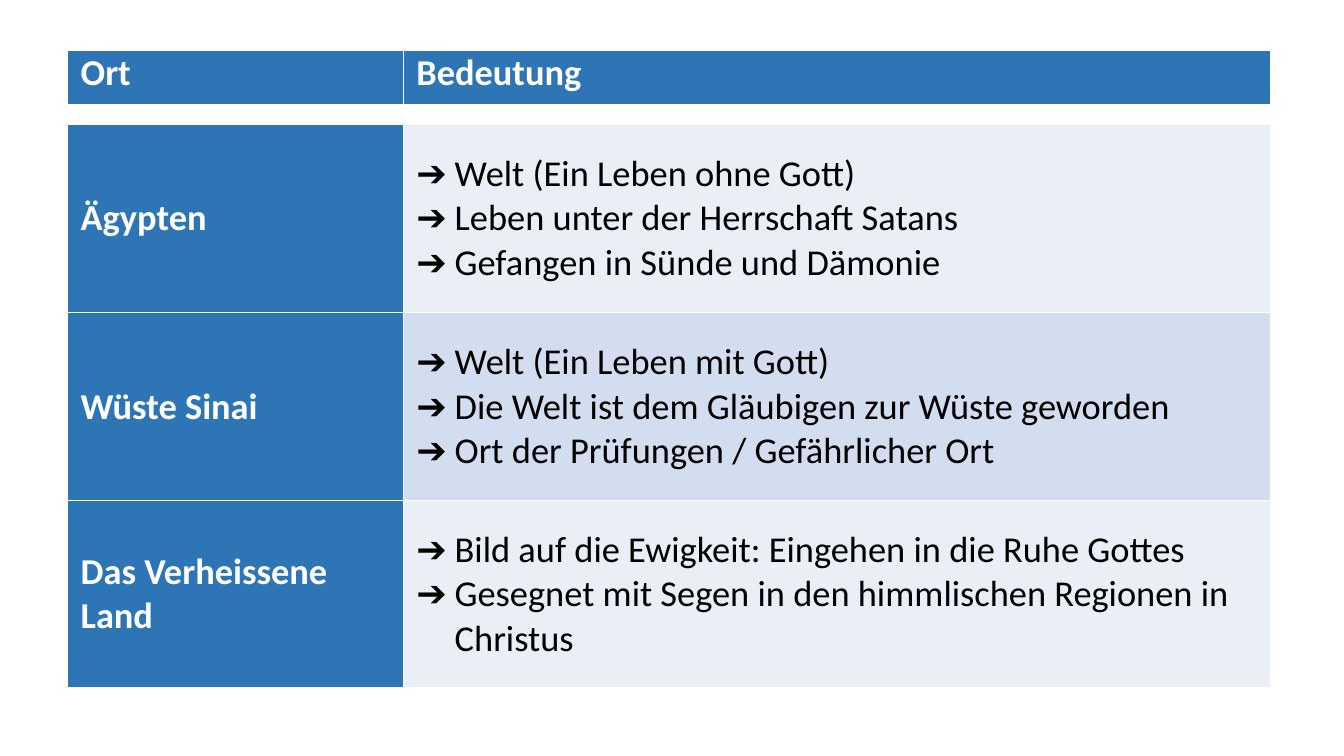
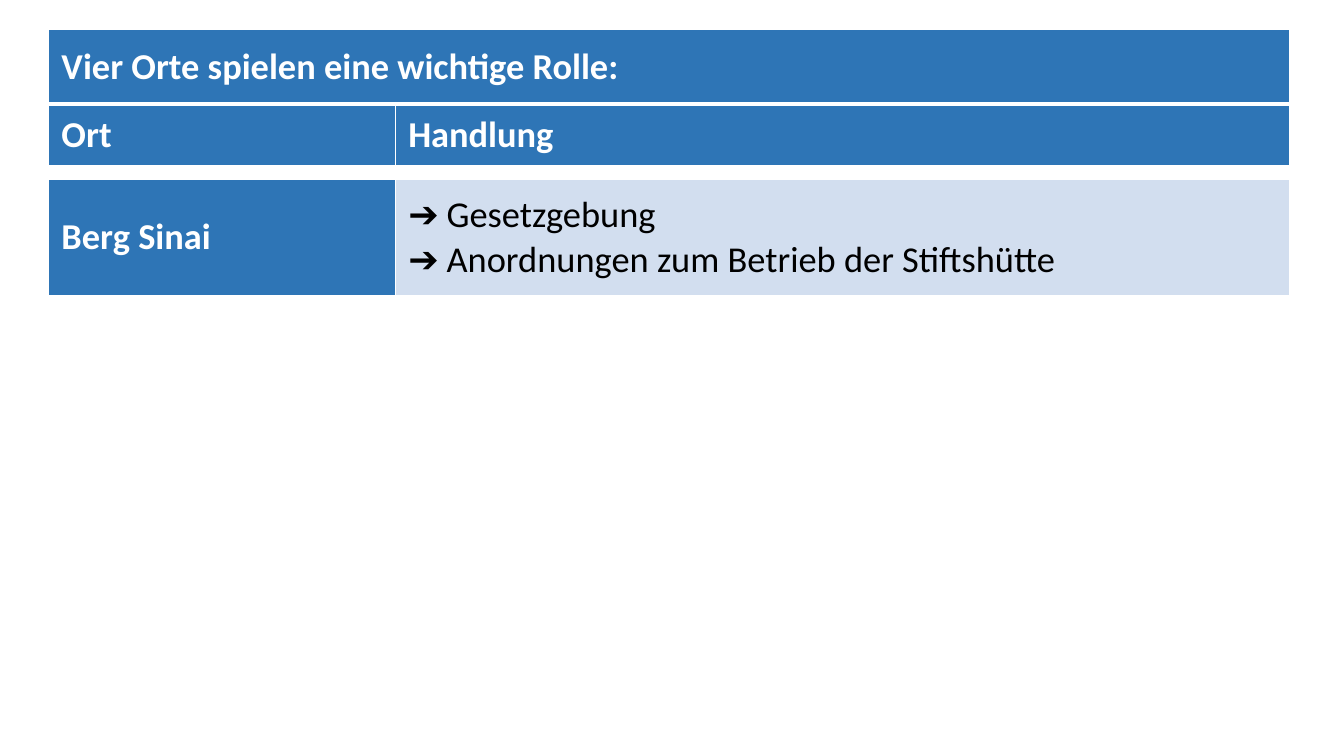
from dataclasses import dataclass

from lxml import etree
from pptx import Presentation
from pptx.dml.color import RGBColor
from pptx.enum.text import MSO_ANCHOR, PP_ALIGN
from pptx.oxml.ns import qn
from pptx.util import Inches, Pt

TOP, MIDDLE = MSO_ANCHOR.TOP, MSO_ANCHOR.MIDDLE
LEFT, JUSTIFY = PP_ALIGN.LEFT, PP_ALIGN.JUSTIFY


@dataclass(frozen=True)
class Theme:
    font: str = "Calibri"
    text_size: int = 26
    gap_size: int = 4
    thin_line: int = 1
    thick_line: int = 3
    white: str = "FFFFFF"
    black: str = "000000"
    blue: str = "2E75B6"
    pale: str = "EAEFF7"
    light: str = "D2DEEF"
    bullet: str = "➔"
    hanging: float = 0.38
    side_margin: float = 0.13


THEME = Theme()


@dataclass(frozen=True)
class Row:
    height: float
    label: str = ""
    heading: str = ""
    points: tuple[str, ...] = ()
    shade: str = THEME.blue
    anchor: MSO_ANCHOR = MIDDLE
    is_title: bool = False


@dataclass(frozen=True)
class Overview:
    left: float
    top: float
    widths: tuple[float, float]
    rows: tuple[Row, ...]


OVERVIEWS = (
    Overview(0.67, 0.5, (3.33, 8.6), (
        Row(0.55, "Ort", heading="Bedeutung", anchor=TOP),
        Row(0.18, shade=THEME.white),
        Row(1.87, "Ägypten", shade=THEME.pale, points=(
            "Welt (Ein Leben ohne Gott)",
            "Leben unter der Herrschaft Satans",
            "Gefangen in Sünde und Dämonie")),
        Row(1.87, "Wüste Sinai", shade=THEME.light, points=(
            "Welt (Ein Leben mit Gott)",
            "Die Welt ist dem Gläubigen zur Wüste geworden",
            "Ort der Prüfungen / Gefährlicher Ort")),
        Row(1.85, "Das Verheissene Land", shade=THEME.pale, points=(
            "Bild auf die Ewigkeit: Eingehen in die Ruhe Gottes",
            "Gesegnet mit Segen in den himmlischen Regionen in Christus")),
    )),
    Overview(0.48, 0.29, (3.44, 8.87), (
        Row(0.74, "Vier Orte spielen eine wichtige Rolle:", is_title=True),
        Row(0.61, "Ort", heading="Handlung"),
        Row(0.14, shade=THEME.white),
        Row(1.15, "Berg Sinai", shade=THEME.light, points=(
            "Gesetzgebung",
            "Anordnungen zum Betrieb der Stiftshütte")),
    )),
)


def add_borders(cell, top: int, bottom: int) -> None:
    properties = cell._tc.get_or_add_tcPr()
    sides = {"L": THEME.thin_line, "R": THEME.thin_line, "T": top, "B": bottom}
    for side, width in sides.items():
        line = etree.SubElement(properties, qn(f"a:ln{side}"), w=str(Pt(width)))
        fill = etree.SubElement(line, qn("a:solidFill"))
        etree.SubElement(fill, qn("a:srgbClr"), val=THEME.white)


def add_bullet(paragraph) -> None:
    properties = paragraph._p.get_or_add_pPr()
    indent = Inches(THEME.hanging)
    properties.set("marL", str(indent))
    properties.set("indent", str(-indent))
    etree.SubElement(properties, qn("a:buFont"), typeface=THEME.font)
    etree.SubElement(properties, qn("a:buChar"), char=THEME.bullet)


def write_lines(cell, lines: tuple[str, ...], color: str, bold: bool,
                align: PP_ALIGN, bulleted: bool) -> None:
    frame = cell.text_frame
    for index, line in enumerate(lines):
        paragraph = frame.add_paragraph() if index else frame.paragraphs[0]
        paragraph.alignment = align
        if bulleted:
            add_bullet(paragraph)
        run = paragraph.add_run()
        run.text = line
        run.font.name = THEME.font
        run.font.size = Pt(THEME.text_size)
        run.font.bold = bold
        run.font.color.rgb = RGBColor.from_string(color)


def style_cell(cell, fill: str, anchor: MSO_ANCHOR, top: int, bottom: int) -> None:
    cell.margin_left = cell.margin_right = Inches(THEME.side_margin)
    cell.margin_top = cell.margin_bottom = 0
    cell.vertical_anchor = anchor
    add_borders(cell, top, bottom)
    cell.fill.solid()
    cell.fill.fore_color.rgb = RGBColor.from_string(fill)


def shrink_empty(cell) -> None:
    paragraph = cell.text_frame.paragraphs[0]._p
    etree.SubElement(paragraph, qn("a:endParaRPr"), sz=str(THEME.gap_size * 100))


def fill_row(table, index: int, row: Row) -> None:
    table.rows[index].height = Inches(row.height)
    place, meaning = table.cell(index, 0), table.cell(index, 1)
    label_fill = THEME.blue if row.label else row.shade
    top = THEME.thick_line if index == 1 else THEME.thin_line
    bottom = THEME.thick_line if index == 0 else THEME.thin_line
    style_cell(place, label_fill, row.anchor, top, bottom)
    style_cell(meaning, row.shade, row.anchor, top, bottom)
    if row.is_title:
        place.merge(meaning)
    if not row.label:
        shrink_empty(place)
        shrink_empty(meaning)
        return
    align = JUSTIFY if row.heading else LEFT
    write_lines(place, (row.label,), THEME.white, True, align, False)
    if row.heading:
        write_lines(meaning, (row.heading,), THEME.white, True, align, False)
    write_lines(meaning, row.points, THEME.black, False, LEFT, True)


def add_overview(slide, overview: Overview) -> None:
    height = sum(row.height for row in overview.rows)
    table = slide.shapes.add_table(
        len(overview.rows), len(overview.widths),
        Inches(overview.left), Inches(overview.top),
        Inches(sum(overview.widths)), Inches(height)).table
    table.first_row = table.horz_banding = False
    for column, width in zip(table.columns, overview.widths):
        column.width = Inches(width)
    for index, row in enumerate(overview.rows):
        fill_row(table, index, row)


def main() -> None:
    deck = Presentation()
    deck.slide_width, deck.slide_height = Inches(13.33), Inches(7.5)
    blank = deck.slide_layouts[6]
    for overview in OVERVIEWS:
        add_overview(deck.slides.add_slide(blank), overview)
    deck.save("out.pptx")


if __name__ == "__main__":
    main()
